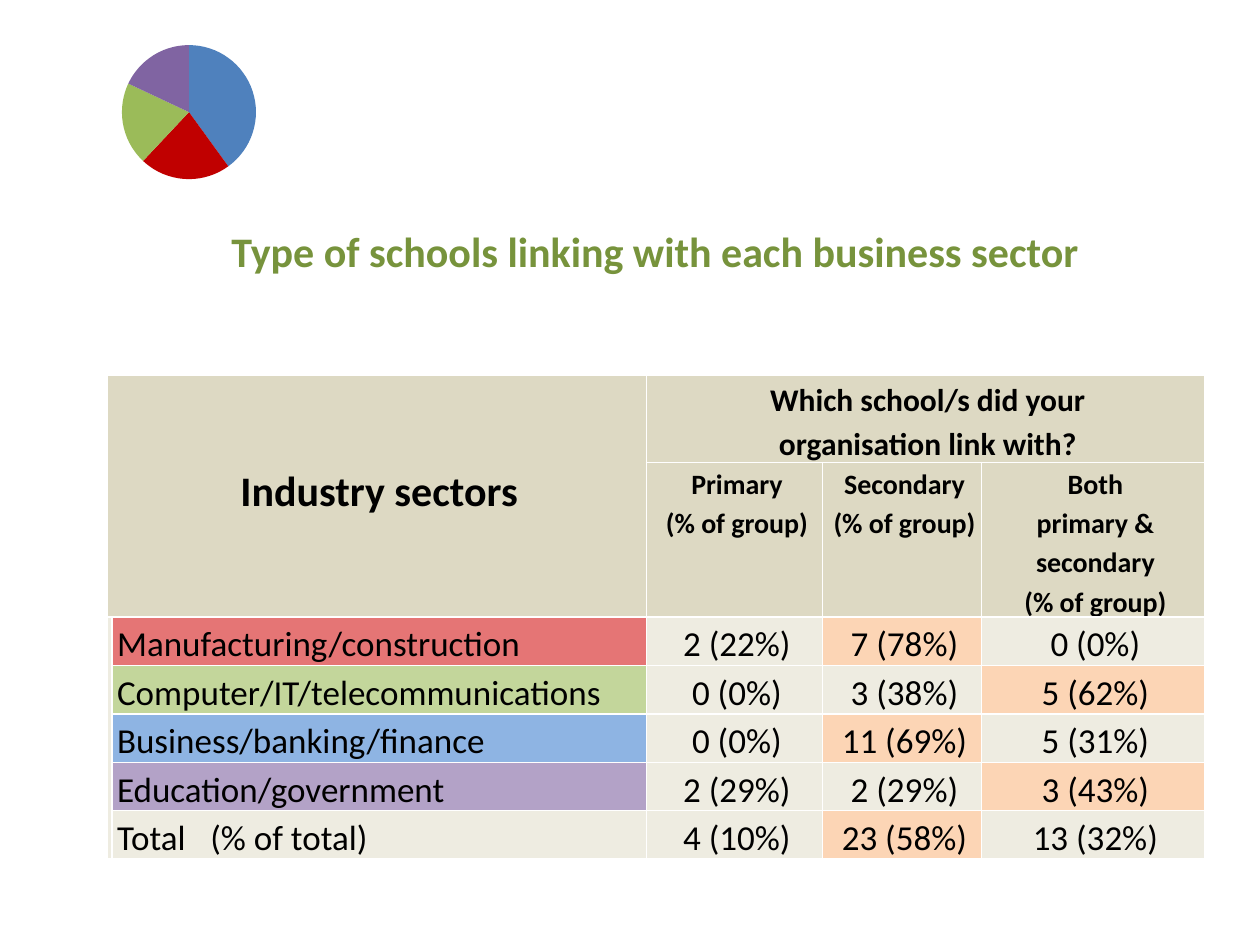
from lxml.etree import SubElement
from pptx import Presentation
from pptx.chart.data import CategoryChartData
from pptx.dml.color import RGBColor
from pptx.enum.chart import XL_CHART_TYPE
from pptx.enum.text import MSO_ANCHOR, MSO_AUTO_SIZE, PP_ALIGN
from pptx.oxml.ns import qn
from pptx.util import Inches, Pt

COLORS = {
    "title": "77933C", "text": "000000", "border": "FFFFFF",
    "header": "DDD9C3", "plain": "EEECE1", "highlight": "FCD5B5",
    "manufacturing": "E57575", "computer": "C3D69B",
    "business": "8EB4E3", "education": "B3A2C7",
}
PIE_VALUES = (40, 22, 20, 18)
PIE_COLORS = ("4F81BD", "C00000", "9BBB59", "8064A2")
COLUMN_WIDTHS = (0.03, 4.24, 1.4, 1.26, 1.77)
ROW_HEIGHTS = (0.68, 1.22) + (0.385,) * 5
GROUP_HEADERS = (
    "Primary\n(% of group)",
    "Secondary\n(% of group)",
    "Both\nprimary & secondary\n(% of group)",
)
SECTORS = (
    ("Manufacturing/construction", "manufacturing", ("2 (22%)", "7 (78%)", "0 (0%)"), 1),
    ("Computer/IT/telecommunications", "computer", ("0 (0%)", "3 (38%)", "5 (62%)"), 2),
    ("Business/banking/finance", "business", ("0 (0%)", "11 (69%)", "5 (31%)"), 1),
    ("Education/government", "education", ("2 (29%)", "2 (29%)", "3 (43%)"), 2),
    ("Total\t(% of total)", "plain", ("4 (10%)", "23 (58%)", "13 (32%)"), 1),
)


def rgb(name):
    """Return the palette colour with this name."""
    return RGBColor.from_string(COLORS[name])


class SlideBuilder:
    """Hold the style and the current slide, and add elements to it."""

    def __init__(self, slide, font="Calibri"):
        """Keep the slide and the font."""
        self.slide = slide
        self.font = font

    def format_text(self, text_frame, size, bold, color="text", align=PP_ALIGN.CENTER):
        """Format all paragraphs and runs of a text frame."""
        for paragraph in text_frame.paragraphs:
            paragraph.alignment = align
            for run in paragraph.runs:
                run.font.name = self.font
                run.font.size = Pt(size)
                run.font.bold = bold
                run.font.color.rgb = rgb(color)

    def title(self, text, left, top, width, height):
        """Place and format the title placeholder."""
        shape = self.slide.shapes.title
        shape.left, shape.top = Inches(left), Inches(top)
        shape.width, shape.height = Inches(width), Inches(height)
        text_frame = shape.text_frame
        text_frame.text = text
        text_frame.word_wrap = True
        text_frame.auto_size = MSO_AUTO_SIZE.SHAPE_TO_FIT_TEXT
        text_frame.vertical_anchor = MSO_ANCHOR.TOP
        self.format_text(text_frame, 24, True, "title")

    def pie(self, values, colors, left, top, width, height):
        """Add a pie chart with one colour for each slice."""
        data = CategoryChartData()
        data.categories = [str(number) for number in range(1, len(values) + 1)]
        data.add_series("Series 1", values)
        chart = self.slide.shapes.add_chart(
            XL_CHART_TYPE.PIE, Inches(left), Inches(top), Inches(width), Inches(height), data
        ).chart
        chart.has_legend = False
        chart.has_title = False
        chart.font.name = self.font
        chart.font.size = Pt(10)
        chart.font.color.rgb = rgb("text")
        plot = chart.plots[0]
        plot.vary_by_categories = True
        for index, color in enumerate(colors):
            fill = plot.series[0].points[index].format.fill
            fill.solid()
            fill.fore_color.rgb = RGBColor.from_string(color)

    def table(self, widths, heights, left, top):
        """Add a table with thin borders and no inner margins."""
        table = self.slide.shapes.add_table(
            len(heights), len(widths), Inches(left), Inches(top),
            Inches(sum(widths)), Inches(sum(heights))
        ).table
        table.first_row = False
        table.horz_banding = False
        for column, width in zip(table.columns, widths):
            column.width = Inches(width)
        for row, height in zip(table.rows, heights):
            row.height = Inches(height)
        for cell in table.iter_cells():
            cell.margin_left = cell.margin_right = 0
            cell.margin_top = cell.margin_bottom = 0
            self.borders(cell)
            cell.fill.solid()
            cell.fill.fore_color.rgb = rgb("plain")
        return table

    def borders(self, cell):
        """Draw a one-point line on each side of a cell."""
        properties = cell._tc.get_or_add_tcPr()
        for side in ("a:lnL", "a:lnR", "a:lnT", "a:lnB"):
            line = SubElement(properties, qn(side), w=str(Pt(1)))
            fill = SubElement(line, qn("a:solidFill"))
            SubElement(fill, qn("a:srgbClr"), val=COLORS["border"])

    def cell(self, cell, text, fill, size, bold=False,
             align=PP_ALIGN.CENTER, anchor=MSO_ANCHOR.MIDDLE):
        """Fill a table cell with formatted text."""
        cell.fill.fore_color.rgb = rgb(fill)
        cell.margin_left = Inches(0.04)
        cell.vertical_anchor = anchor
        cell.text_frame.text = text
        self.format_text(cell.text_frame, size, bold, align=align)
        for paragraph in cell.text_frame.paragraphs:
            paragraph.line_spacing = 1.15
            if "\t" in text:
                tabs = SubElement(paragraph._p.get_or_add_pPr(), qn("a:tabLst"))
                SubElement(tabs, qn("a:tab"), pos=str(Inches(0.74)), algn="l")


def main():
    """Build and save the slide."""
    presentation = Presentation()
    presentation.slide_width = Inches(10)
    presentation.slide_height = Inches(7.5)
    builder = SlideBuilder(presentation.slides.add_slide(presentation.slide_layouts[5]))

    builder.title("Type of schools linking with each business sector", 1.35, 1.74, 7.7, 0.5)
    table = builder.table(COLUMN_WIDTHS, ROW_HEIGHTS, 0.85, 2.98)
    table.cell(0, 0).merge(table.cell(1, 1))
    table.cell(0, 2).merge(table.cell(0, 4))
    table.cell(2, 0).merge(table.cell(6, 0))

    builder.cell(table.cell(0, 0), "Industry sectors", "header", 24, True)
    table.cell(0, 0).margin_bottom = Inches(0.12)
    builder.cell(table.cell(0, 2), "Which school/s did your\norganisation link with?",
                 "header", 18, True, anchor=MSO_ANCHOR.TOP)
    for column, text in enumerate(GROUP_HEADERS, 2):
        builder.cell(table.cell(1, column), text, "header", 16, True, anchor=MSO_ANCHOR.TOP)
    for row, (sector, color, values, highlighted) in enumerate(SECTORS, 2):
        builder.cell(table.cell(row, 1), sector, color, 20, align=PP_ALIGN.JUSTIFY)
        for index, value in enumerate(values):
            fill = "highlight" if index == highlighted else "plain"
            builder.cell(table.cell(row, index + 2), value, fill, 20)

    builder.pie(PIE_VALUES, PIE_COLORS, 0.4, 0.22, 2.2, 1.34)
    presentation.save("out.pptx")


if __name__ == "__main__":
    main()
